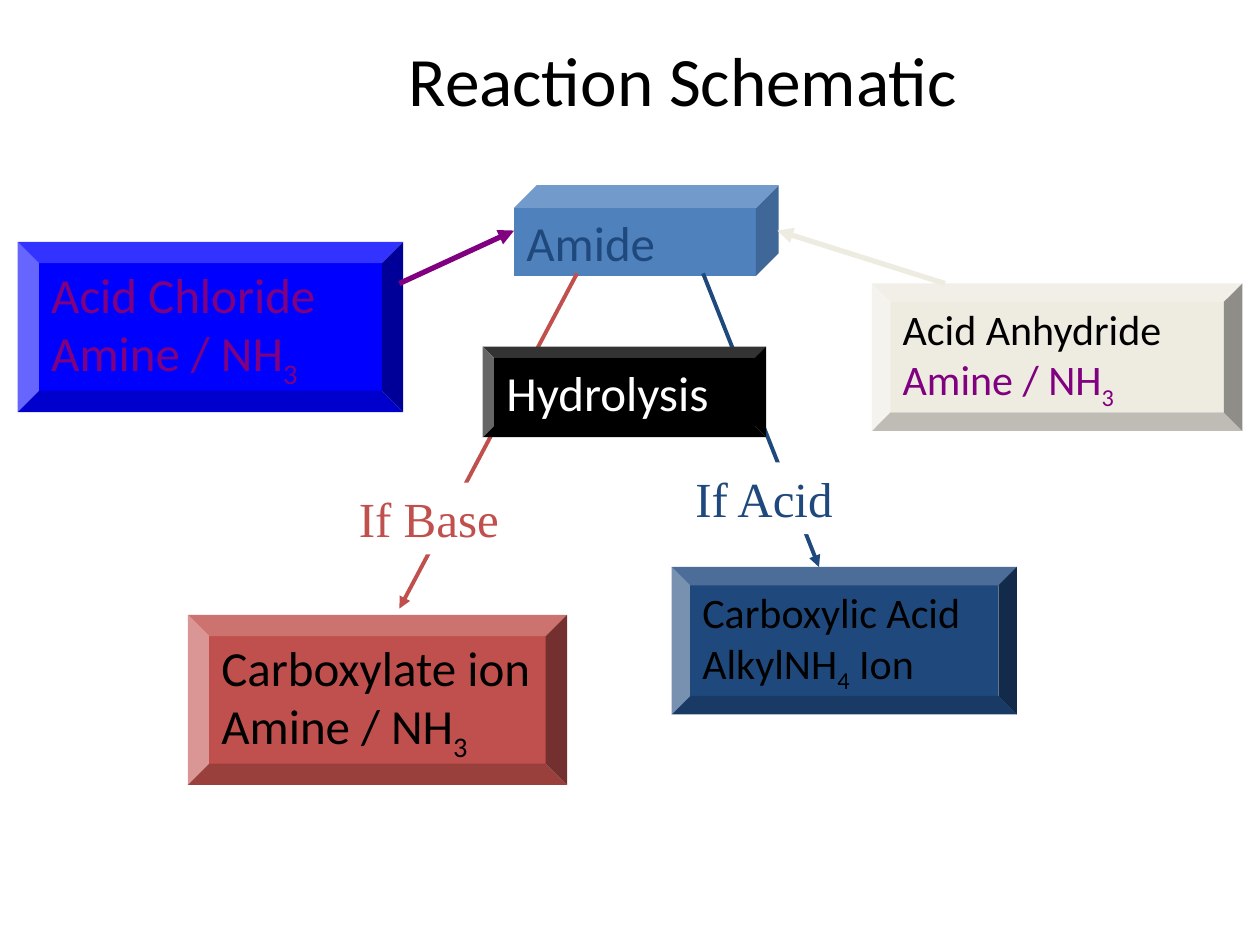
from lxml.etree import SubElement
from pptx import Presentation
from pptx.dml.color import RGBColor
from pptx.enum.shapes import MSO_CONNECTOR, MSO_SHAPE
from pptx.enum.text import MSO_ANCHOR, MSO_AUTO_SIZE, PP_ALIGN
from pptx.oxml.ns import qn
from pptx.util import Inches, Pt

BLACK, WHITE, PURPLE = "000000", "FFFFFF", "800080"
AMIDE, BASE, ACID, CHLORIDE, ANHYDRIDE = "4F81BD", "C0504D", "1F497D", "0000FF", "EEECE1"


def color(value):
    return RGBColor.from_string(value)


def set_attributes(target, values):
    for name, value in values.items():
        setattr(target, name, value)


def write_line(para, text, size, ink, font="Calibri"):
    """Write one paragraph; the parts between bars are subscripts."""
    for index, part in enumerate(text.split("|")):
        if not part:
            continue
        span = para.add_run()
        span.text = part
        set_attributes(span.font, {"size": Pt(size), "name": font})
        span.font.color.rgb = color(ink)
        if index % 2:
            span.font._element.set("baseline", "-25000")


def add_title(page, box, text):
    title = page.shapes.title
    set_attributes(title, dict(zip(("left", "top", "width", "height"), map(Inches, box))))
    frame = title.text_frame
    set_attributes(frame, {"vertical_anchor": MSO_ANCHOR.MIDDLE, "word_wrap": True,
                           "auto_size": MSO_AUTO_SIZE.NONE})
    frame.paragraphs[0].alignment = PP_ALIGN.CENTER
    write_line(frame.paragraphs[0], text, 39.6, BLACK)


def add_block(page, box, kind, fill, lines, size=28, wrap=True,
              anchor=MSO_ANCHOR.MIDDLE, font="Calibri"):
    """Place a filled shape holding (text, colour) lines."""
    block = page.shapes.add_shape(kind, *map(Inches, box))
    block.shadow.inherit = False
    block.fill.solid()
    block.fill.fore_color.rgb = color(fill)
    block.line.fill.background()
    frame = block.text_frame
    set_attributes(frame, {"vertical_anchor": anchor, "word_wrap": wrap,
                           "auto_size": MSO_AUTO_SIZE.SHAPE_TO_FIT_TEXT})
    for index, (text, ink) in enumerate(lines):
        para = frame.add_paragraph() if index else frame.paragraphs[0]
        para.alignment = PP_ALIGN.LEFT
        write_line(para, text, size, ink, font)


def add_label(page, box, text, ink):
    add_block(page, box, MSO_SHAPE.RECTANGLE, WHITE, [(text, ink)], wrap=False,
              anchor=MSO_ANCHOR.TOP, font="Times New Roman")


def add_arrow(page, start, end, ink, width):
    arrow = page.shapes.add_connector(MSO_CONNECTOR.STRAIGHT, *map(Inches, start + end))
    arrow.line.color.rgb = color(ink)
    arrow.line.width = Pt(width)
    SubElement(arrow.line._get_or_add_ln(), qn("a:tailEnd"), type="triangle")
    SubElement(arrow._element.spPr, qn("a:effectLst"))


def add_products(page):
    """Amide and the two hydrolysis routes below it."""
    add_block(page, (4.08, 1.47, 2.1, 0.72), MSO_SHAPE.CUBE, AMIDE, [("Amide", ACID)])
    add_arrow(page, (4.58, 2.17), (3.17, 4.83), BASE, 2.25)
    add_arrow(page, (5.58, 2.17), (6.5, 4.5), ACID, 2.25)
    add_block(page, (1.49, 4.88, 3.01, 1.35), MSO_SHAPE.BEVEL, BASE,
              [("Carboxylate ion", BLACK), ("Amine / NH|3|", BLACK)], wrap=False)
    add_block(page, (5.33, 4.5, 2.74, 1.17), MSO_SHAPE.BEVEL, ACID,
              [("Carboxylic Acid", BLACK), ("AlkylNH|4| Ion", BLACK)], size=24)
    add_label(page, (2.75, 3.83, 1.31, 0.57), "If Base", BASE)
    add_label(page, (5.42, 3.67, 1.31, 0.57), "If Acid", ACID)
    add_block(page, (3.83, 2.75, 2.25, 0.72), MSO_SHAPE.BEVEL, BLACK, [("Hydrolysis", WHITE)])


def add_reactants(page):
    """The two starting materials that lead to the amide."""
    add_block(page, (0.14, 1.92, 3.06, 1.35), MSO_SHAPE.BEVEL, CHLORIDE,
              [("Acid Chloride", PURPLE), ("Amine / NH|3|", PURPLE)])
    add_arrow(page, (3.17, 2.25), (4.08, 1.83), PURPLE, 3)
    add_block(page, (6.92, 2.25, 2.94, 1.17), MSO_SHAPE.BEVEL, ANHYDRIDE,
              [("Acid Anhydride", BLACK), ("Amine / NH|3|", PURPLE)], size=24)
    add_arrow(page, (7.5, 2.25), (6.17, 1.83), ANHYDRIDE, 3)


def main():
    deck = Presentation()
    set_attributes(deck, {"slide_width": Inches(10), "slide_height": Inches(7.5)})
    page = deck.slides.add_slide(deck.slide_layouts[5])
    add_title(page, (1.17, 0.25, 8.5, 0.75), "Reaction Schematic")
    add_products(page)
    add_reactants(page)
    deck.save("out.pptx")


if __name__ == "__main__":
    main()
